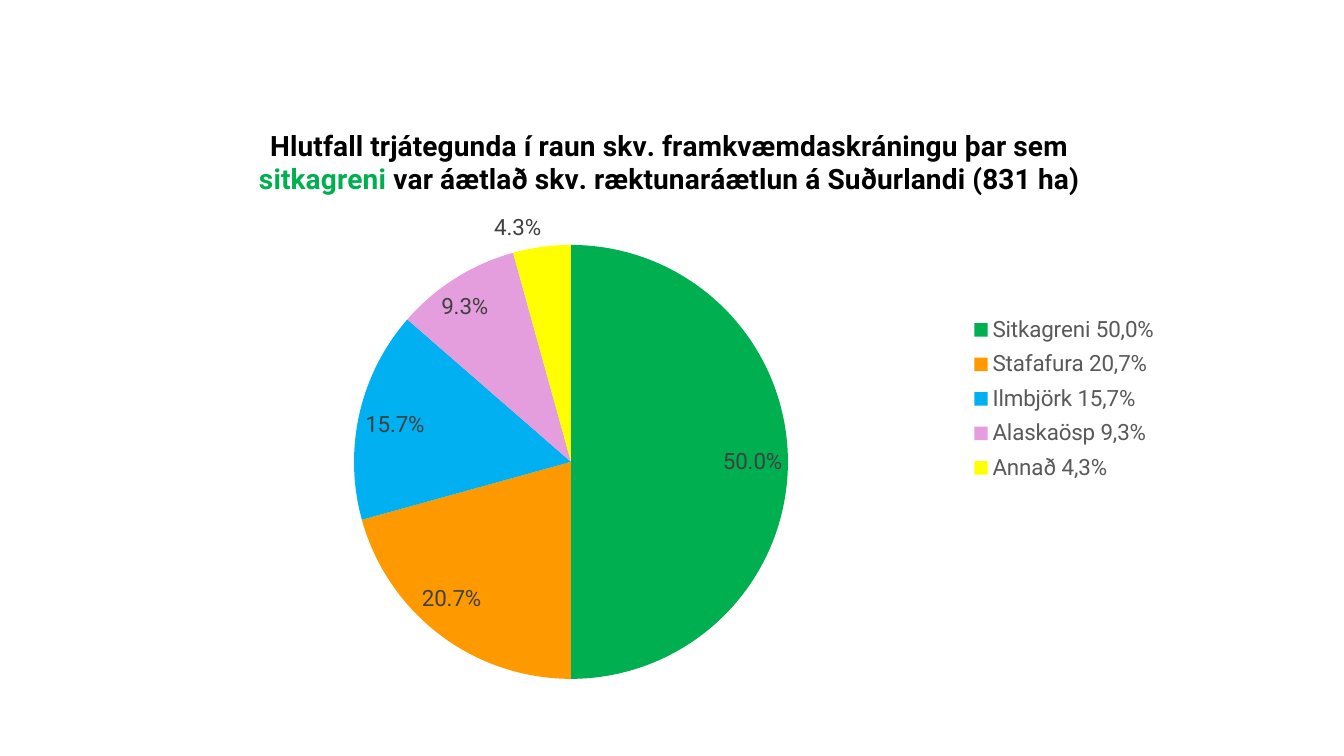
from dataclasses import dataclass

from lxml.etree import SubElement
from pptx import Presentation
from pptx.chart.data import CategoryChartData
from pptx.dml.color import RGBColor as RGB
from pptx.enum.chart import XL_CHART_TYPE as CT, XL_LABEL_POSITION as LP, XL_LEGEND_POSITION as LG
from pptx.oxml.ns import qn
from pptx.util import Pt

TITLE = [
    ("Hlutfall trjátegunda í raun skv. framkvæmdaskráningu þar sem ", "title"),
    ("sitkagreni", "spruce"),
    (" var áætlað skv. ræktunaráætlun á Suðurlandi (831 ha)", "title"),
]
SPECIES = [
    ("Sitkagreni 50,0%", 0.5, "spruce"),
    ("Stafafura 20,7%", 0.207, "pine"),
    ("Ilmbjörk 15,7%", 0.157, "birch"),
    ("Alaskaösp 9,3%", 0.093, "poplar"),
    ("Annað 4,3%", 0.043, "other"),
]
SLIDE = (1344, 756)
CHART = (93, 107, 1159, 586)
TITLE_AT = (256, 125)
PIE = (354, 245, 434, 434)
LEGEND = (968, 308, 192, 182)
PX = 914400 / 100.8


@dataclass(frozen=True)
class Theme:
    font: str = "Roboto"
    title: str = "000000"
    label: str = "404040"
    legend: str = "595959"
    spruce: str = "00B050"
    pine: str = "FF9900"
    birch: str = "00B0F0"
    poplar: str = "E59EDD"
    other: str = "FFFF00"
    title_size: int = 20
    text_size: int = 16

    def rgb(self, role):
        return RGB.from_string(getattr(self, role))

    def style(self, font, role, size, bold=False):
        font.name, font.size, font.bold = self.font, Pt(size), bold
        font.color.rgb = self.rgb(role)


def emu(px):
    return round(px * PX)


def place(element, box, inner=False):
    left, top, width, height = CHART
    shares = [(box[0] - left) / width, (box[1] - top) / height]
    shares += [n / total for n, total in zip(box[2:], (width, height))]
    layout = element.find(qn("c:layout"))
    if layout is None:
        layout = element.makeelement(qn("c:layout"), {})
        before = {"title": "c:tx", "legend": "c:legendPos"}.get(element.tag.split("}")[1])
        if before:
            element.find(qn(before)).addnext(layout)
        else:
            element.insert(0, layout)
    manual = SubElement(layout, qn("c:manualLayout"))
    if inner:
        SubElement(manual, qn("c:layoutTarget"), val="inner")
    for name in ("xMode", "yMode"):
        SubElement(manual, qn(f"c:{name}"), val="edge")
    for name, share in zip("xywh", shares):
        SubElement(manual, qn(f"c:{name}"), val=f"{share:.4f}")


theme = Theme()
prs = Presentation()
prs.slide_width, prs.slide_height = map(emu, SLIDE)
slide = prs.slides.add_slide(prs.slide_layouts[6])

data = CategoryChartData(number_format="0.0%")
data.categories = [name for name, _, _ in SPECIES]
data.add_series("Series 1", [share for _, share, _ in SPECIES])
chart = slide.shapes.add_chart(CT.PIE, *map(emu, CHART), data).chart
theme.style(chart.font, "title", 10)

p = chart.chart_title.text_frame.paragraphs[0]
theme.style(p.font, "title", theme.title_size, True)
for text, role in TITLE:
    r = p.add_run()
    r.text = text
    theme.style(r.font, role, theme.title_size, True)
chart.chart_title.include_in_layout = False

chart.has_legend = True
legend = chart.legend
legend.position = LG.RIGHT
legend.include_in_layout = False
theme.style(legend.font, "legend", theme.text_size)

plot = chart.plots[0]
plot.vary_by_categories = True
series = plot.series[0]
for i, (_, _, role) in enumerate(SPECIES):
    fill = series.points[i].format.fill
    fill.solid()
    fill.fore_color.rgb = theme.rgb(role)

labels = series.data_labels
labels.show_value = True
labels.number_format = "0.0%"
labels.number_format_is_linked = False
labels.position = LP.BEST_FIT
theme.style(labels.font, "label", theme.text_size)

space = chart.element.find(qn("c:chart"))
place(space.find(qn("c:title")), TITLE_AT)
place(space.find(qn("c:plotArea")), PIE, inner=True)
place(space.find(qn("c:legend")), LEGEND)

prs.save("out.pptx")
